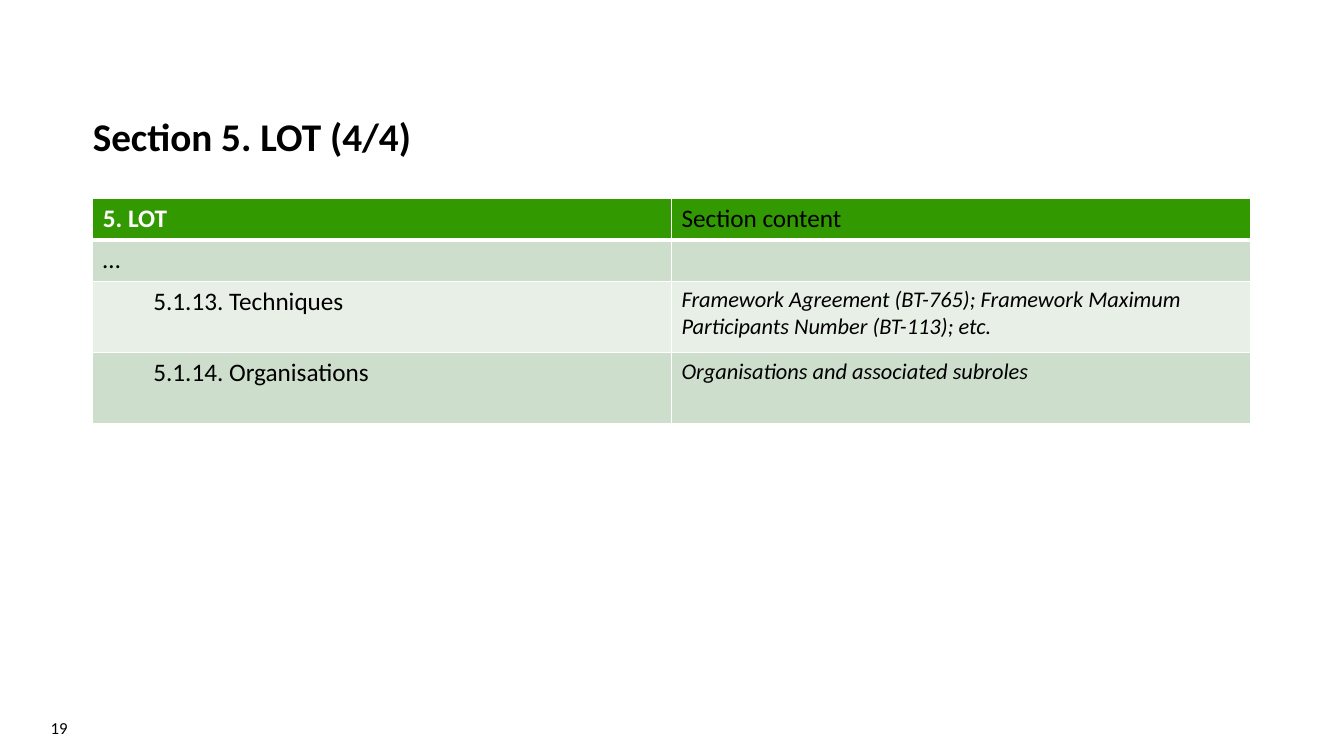
import pptx
import pptx.dml.color
import pptx.enum.text
import pptx.oxml
import pptx.oxml.ns
import pptx.util
from pptx.util import Inches

HEADER, DARK_BAND, LIGHT_BAND = "339900", "CEDECC", "E8EFE7"
BLACK, WHITE = "000000", "FFFFFF"


def color(value):
    return pptx.dml.color.RGBColor.from_string(value)


class LotSlide:
    font = "Calibri"

    def __init__(self, presentation):
        self.slide = presentation.slides.add_slide(presentation.slide_layouts[5])

    def add_run(self, paragraph, text, size, fill=BLACK, bold=False, italic=False):
        run = paragraph.add_run()
        run.text = text
        run.font.name = self.font
        run.font.size = pptx.util.Pt(size)
        run.font.bold = bold
        run.font.italic = italic
        run.font.color.rgb = color(fill)

    def add_title(self, text, left, top, width, height):
        title = self.slide.shapes.title
        title.left, title.top = Inches(left), Inches(top)
        title.width, title.height = Inches(width), Inches(height)
        frame = title.text_frame
        frame.word_wrap = True
        frame.auto_size = pptx.enum.text.MSO_AUTO_SIZE.NONE
        frame.vertical_anchor = pptx.enum.text.MSO_ANCHOR.BOTTOM
        frame.margin_left = frame.margin_right = frame.margin_bottom = 0
        frame.margin_top = Inches(0.05)
        paragraph = frame.paragraphs[0]
        paragraph.alignment = pptx.enum.text.PP_ALIGN.LEFT
        paragraph.line_spacing = 0.9
        self.add_run(paragraph, text, 28, bold=True)

    def add_borders(self, cell, widths):
        properties = cell._tc.get_or_add_tcPr()
        for index, (side, width) in enumerate(widths.items()):
            border = pptx.oxml.parse_xml(
                f'<a:{side} {pptx.oxml.ns.nsdecls("a")} w="{pptx.util.Pt(width)}">'
                f'<a:solidFill><a:srgbClr val="{WHITE}"/></a:solidFill></a:{side}>'
            )
            properties.insert(index, border)

    def add_table(self, rows, left, top, width, heights):
        columns = len(rows[0][1])
        frame = self.slide.shapes.add_table(
            len(rows), columns, Inches(left), Inches(top),
            Inches(width), Inches(sum(heights)),
        )
        table = frame.table
        for column in table.columns:
            column.width = Inches(width / columns)
        for row_index, (fill, contents) in enumerate(rows):
            table.rows[row_index].height = Inches(heights[row_index])
            for column_index, (text, indent, style) in enumerate(contents):
                cell = table.cell(row_index, column_index)
                cell.fill.solid()
                cell.fill.fore_color.rgb = color(fill)
                top_width = 3 if row_index == 1 else 1
                bottom_width = 3 if row_index == 0 else 1
                self.add_borders(cell, {"lnL": 1, "lnR": 1, "lnT": top_width, "lnB": bottom_width})
                paragraph = cell.text_frame.paragraphs[0]
                if indent:
                    paragraph.level = 1
                    paragraph._p.get_or_add_pPr().set("marL", str(Inches(indent)))
                if text:
                    self.add_run(paragraph, text, **style)

    def add_page_number(self, text, left, top, width, height):
        box = self.slide.shapes.add_textbox(
            Inches(left), Inches(top), Inches(width), Inches(height)
        )
        frame = box.text_frame
        frame.word_wrap = True
        frame.vertical_anchor = pptx.enum.text.MSO_ANCHOR.MIDDLE
        paragraph = frame.paragraphs[0]
        paragraph.alignment = pptx.enum.text.PP_ALIGN.RIGHT
        self.add_run(paragraph, text, 12)


def main():
    presentation = pptx.Presentation()
    presentation.slide_width = Inches(13.33)
    presentation.slide_height = Inches(7.5)

    plain = {"size": 18}
    heading = {"size": 18, "fill": WHITE, "bold": True}
    detail = {"size": 16, "italic": True}
    rows = [
        (HEADER, [("5. LOT", 0, heading), ("Section content", 0, plain)]),
        (DARK_BAND, [("…", 0, plain), ("", 0, plain)]),
        (LIGHT_BAND, [
            ("5.1.13. Techniques", 0.5, plain),
            ("Framework Agreement (BT-765); Framework Maximum "
             "Participants Number (BT-113); etc.", 0, detail),
        ]),
        (DARK_BAND, [
            ("5.1.14. Organisations", 0.5, plain),
            ("Organisations and associated subroles", 0, detail),
        ]),
    ]

    lot = LotSlide(presentation)
    lot.add_title("Section 5. LOT (4/4)", 0.92, 0.14, 11.48, 1.45)
    lot.add_table(rows, 0.92, 1.97, 11.48, [0.41, 0.41, 0.71, 0.7])
    lot.add_page_number("19", 0, 7.02, 0.77, 0.4)
    presentation.save("out.pptx")


if __name__ == "__main__":
    main()
